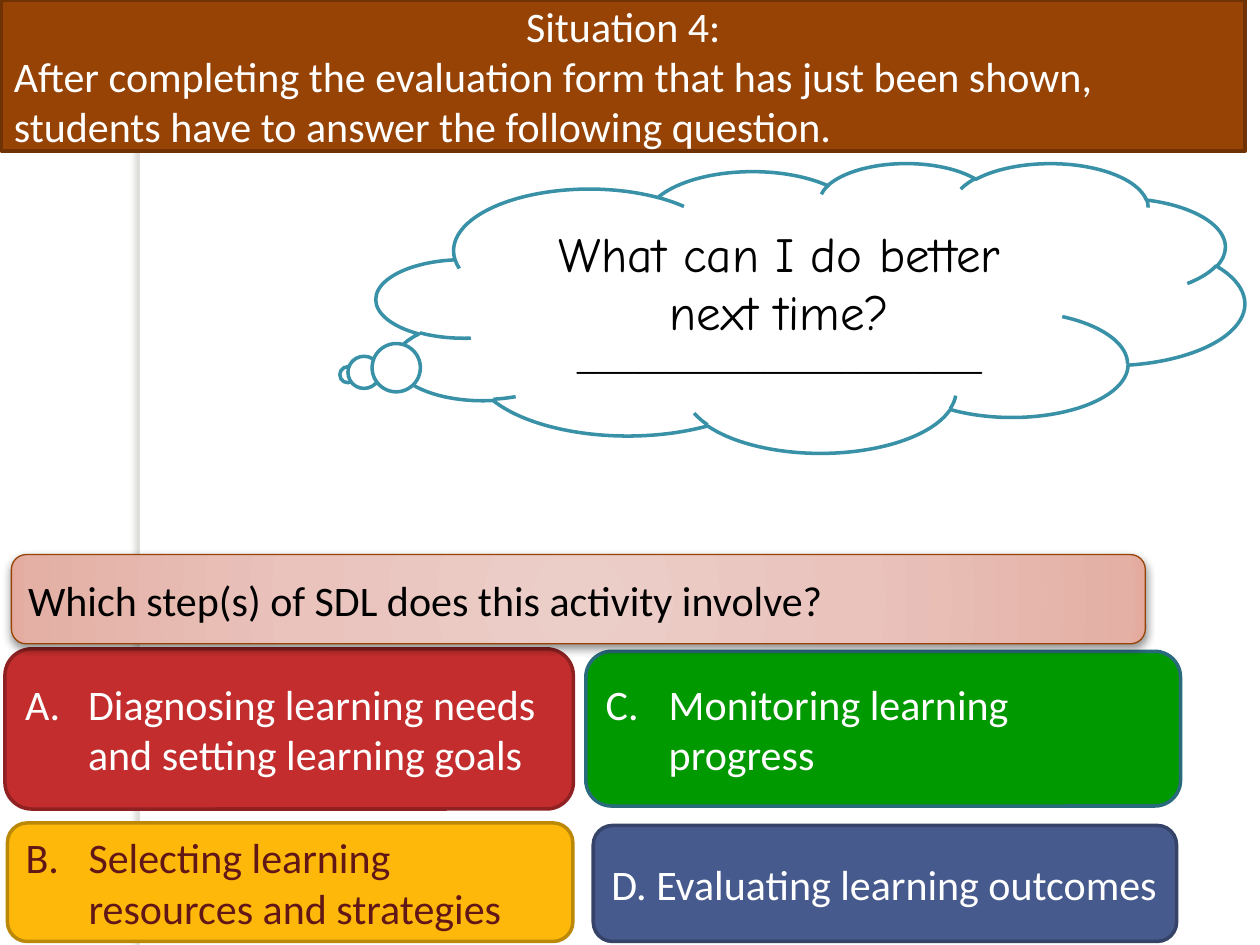
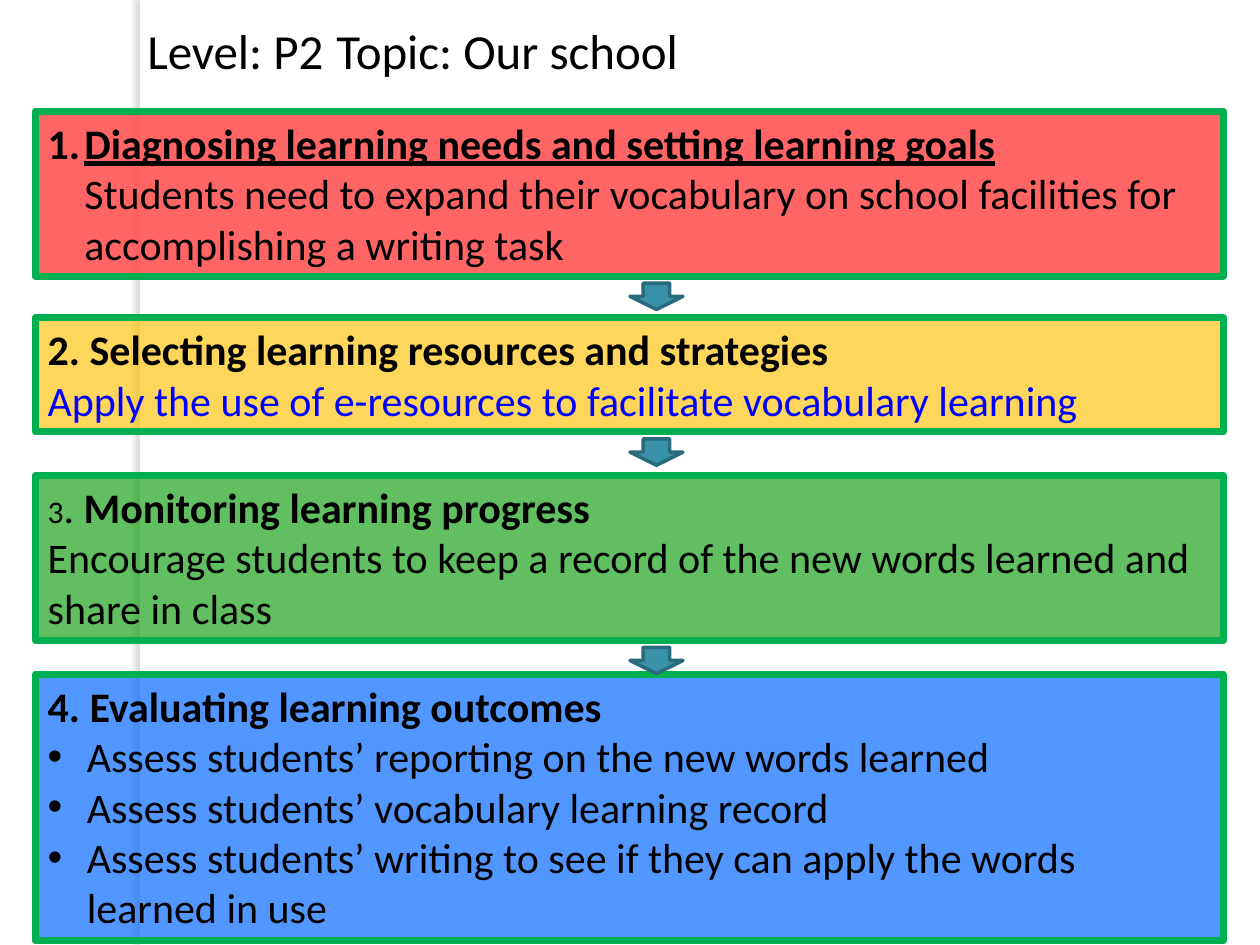
from lxml import etree
from pptx import Presentation
from pptx.dml.color import RGBColor as Rgb
from pptx.enum.shapes import MSO_SHAPE as Kind
from pptx.enum.text import MSO_ANCHOR as Anchor, PP_ALIGN as Align
from pptx.oxml import parse_xml
from pptx.oxml.ns import nsdecls, qn
from pptx.util import Cm, Pt

WIDE, HIGH = 25.4, 19.05
FONT = "Calibri"
HEX = {
    "white": "FFFFFF", "black": "000000", "shade": "736F63",
    "brown": "964305", "umber": "6F3204", "wine": "621717",
    "red": "C32D2E", "maroon": "902122", "gold": "FEB80A", "ochre": "BC8807",
    "green": "009900", "navy": "475A8D", "ink": "354368",
    "teal": "3891A7", "slate": "296B7C", "frame": "00B050",
    "coral": "FF5050", "amber": "FFC000", "azure": "0066FF", "link": "0000FF",
}

# Slide 1: the situation, the question and the answers
BAND = [
    {"text": "Situation 4:", "align": Align.CENTER},
    {"text": "After completing the evaluation form that has just been shown, "
             "students have to answer the following question."},
]
CLOUD = [
    {"text": "What can I do better next time?", "size": 28, "font": "Comic Neue",
     "align": Align.CENTER},
    {"text": "_" * 26, "size": 18, "font": "Comic Neue", "align": Align.CENTER},
]
ASK = "Which step(s) of SDL does this activity involve?"
GLOW = [(0, "ECCEC9"), (50, "E9C3BC"), (97, "E4AFA4"), (100, "E4A89B")]
# place, fill, line, text colour, number, text
CHOICES = [
    ((0.1, 13.08, 11.46, 3.23), "red", "maroon", "white", 1,
     "Diagnosing learning needs and setting learning goals"),
    ((0.15, 16.59, 11.4, 2.39), "gold", "ochre", "wine", 2,
     "Selecting learning resources and strategies"),
    ((11.81, 13.13, 11.99, 3.12), "green", "slate", "white", 3,
     "Monitoring learning progress"),
    ((11.96, 16.64, 11.76, 2.34), "navy", "ink", "white", None,
     "D. Evaluating learning outcomes"),
]

# Slide 2: the four steps
HEAD = "Level: P2\tTopic: Our school"
DOT = {"mark": "•", "hang": 0.79}
# top, height, fill, opacity in percent, paragraphs
STEPS = [
    (2.24, 3.33, "coral", 88, [
        {"text": "Diagnosing learning needs and setting learning goals",
         "bold": True, "under": True, "auto": ("arabicPeriod", 1), "hang": 0.74},
        {"text": "Students need to expand their vocabulary on school facilities "
                 "for accomplishing a writing task", "left": 0.74},
    ]),
    (6.4, 2.31, "amber", 64, [
        {"text": "2. Selecting learning resources and strategies", "bold": True},
        {"text": "Apply the use of e-resources to facilitate vocabulary learning",
         "color": "link"},
    ]),
    (9.58, 3.33, "green", 62, [
        {"runs": [("3", 18, False), (". ", 24, False),
                  ("Monitoring learning progress", 24, True)]},
        {"text": "Encourage students to keep a record of the new words learned "
                 "and share in class"},
    ]),
    (13.59, 5.38, "azure", 68, [
        {"text": "4. Evaluating learning outcomes", "bold": True},
        {"text": "Assess students’ reporting on the new words learned", **DOT},
        {"text": "Assess students’ vocabulary learning record", **DOT},
        {"text": "Assess students’ writing to see if they can apply the words "
                 "learned in use", **DOT},
    ]),
]
LEFT, SPAN = 0.71, 23.95
ARROW = (12.7, 1.07, 0.53)  # left, width, height
GAP = 0.14


def rgb(name):
    return Rgb.from_string(HEX[name])


def sub(node, tag, **attrs):
    return etree.SubElement(node, qn("a:" + tag),
                            {key: str(val) for key, val in attrs.items()})


def write(frame, paras, color, anchor):
    """Fill a text frame with paragraphs given as dicts."""
    frame.word_wrap = True
    frame.vertical_anchor = anchor
    for i, item in enumerate(paras):
        para = frame.add_paragraph() if i else frame.paragraphs[0]
        para.alignment = item.get("align", Align.LEFT)
        props = para._p.get_or_add_pPr()
        hang = item.get("hang", 0)
        props.set("marL", str(int(Cm(item.get("left", hang)))))
        props.set("indent", str(-int(Cm(hang))))
        if "mark" in item:
            sub(props, "buFont", typeface="Arial")
            sub(props, "buChar", char=item["mark"])
        elif "auto" in item:
            kind, start = item["auto"]
            sub(props, "buAutoNum", type=kind, startAt=start)
        if "tab" in item:
            sub(sub(props, "tabLst"), "tab", pos=int(Cm(item["tab"])), algn="l")
        font = para.font
        font.name = item.get("font", FONT)
        font.size = Pt(item.get("size", 24))
        font.bold = item.get("bold", False)
        font.underline = item.get("under", False)
        font.color.rgb = rgb(item.get("color", color))
        if "runs" not in item:
            para.add_run().text = item["text"]
        for text, size, bold in item.get("runs", []):
            run = para.add_run()
            run.text = text
            run.font.size, run.font.bold = Pt(size), bold


def draw(slide, kind, at, fill, line=None, width=2, paras=(), color="black",
         anchor=Anchor.MIDDLE):
    shape = slide.shapes.add_shape(kind, *map(Cm, at))
    shape.shadow.inherit = False
    shape.fill.solid()
    shape.fill.fore_color.rgb = rgb(fill)
    if line:
        shape.line.color.rgb = rgb(line)
        shape.line.width = Pt(width)
    else:
        shape.line.fill.background()
    if paras:
        write(shape.text_frame, paras, color, anchor)
    return shape


def shade(shape, color, alpha, blur, dist, angle):
    """Give the shape an outer shadow."""
    effects = shape.element.spPr.find(qn("a:effectLst"))
    outer = sub(effects, "outerShdw", blurRad=int(Pt(blur)), dist=int(Pt(dist)),
                dir=angle * 60000, algn="ctr", rotWithShape=0)
    sub(sub(outer, "srgbClr", val=HEX[color]), "alpha", val=alpha * 1000)


def fade(shape, alpha):
    """Make the solid fill see-through."""
    tint = shape.element.spPr.find(qn("a:solidFill"))[0]
    sub(tint, "alpha", val=alpha * 1000)


def glow(shape, stops):
    """Swap the solid fill for a round gradient from the centre."""
    grad = parse_xml(f'<a:gradFill {nsdecls("a")} rotWithShape="1"/>')
    row = sub(grad, "gsLst")
    for pos, tint in stops:
        sub(sub(row, "gs", pos=pos * 1000), "srgbClr", val=tint)
    half = dict.fromkeys("ltrb", 50000)
    sub(sub(grad, "path", path="circle"), "fillToRect", **half)
    props = shape.element.spPr
    props.replace(props.find(qn("a:solidFill")), grad)


def start(deck):
    """Add a blank slide with the shaded edge that every slide has."""
    slide = deck.slides.add_slide(deck.slide_layouts[6])
    edge = draw(slide, Kind.RECTANGLE, (2.82, 0, 0.2, HIGH), "white")
    shade(edge, "shade", 25, 3, 3, 180)
    return slide


def quiz(deck):
    slide = start(deck)
    for at, fill, line, color, num, text in CHOICES:
        para = {"text": text}
        if num:
            para.update(auto=("alphaUcPeriod", num), hang=1.27)
        draw(slide, Kind.ROUNDED_RECTANGLE, at, fill, line, 2, [para], color)
    ask = draw(slide, Kind.ROUNDED_RECTANGLE, (0.23, 11.18, 22.86, 1.8), "white",
               "brown", 0.75, [{"text": ASK}])
    glow(ask, GLOW)
    shade(ask, "black", 43, 5, 2, 90)
    draw(slide, Kind.RECTANGLE, (0.03, 0, 25.07, 3.05), "brown", "umber", 2,
         BAND, "white")
    cloud = draw(slide, Kind.CLOUD_CALLOUT, (7.59, 3.28, 17.5, 5.84), "white",
                 "teal", 2, CLOUD)
    cloud.adjustments[0], cloud.adjustments[1] = -0.533, 0.232


def plan(deck):
    slide = start(deck)
    head = slide.shapes.add_textbox(*map(Cm, (2.72, 0.28, 16.79, 3.68)))
    write(head.text_frame, [{"text": HEAD, "size": 28, "tab": 7.8}], "black",
          Anchor.TOP)
    for top, high, fill, alpha, paras in STEPS:
        box = draw(slide, Kind.RECTANGLE, (LEFT, top, SPAN, high), fill, "frame",
                   4, paras, anchor=Anchor.TOP)
        fade(box, alpha)
    left, wide, tall = ARROW
    for top, high, *_ in STEPS[:-1]:
        draw(slide, Kind.DOWN_ARROW, (left, top + high + GAP, wide, tall),
             "teal", "slate")


def main():
    deck = Presentation()
    deck.slide_width, deck.slide_height = Cm(WIDE), Cm(HIGH)
    quiz(deck)
    plan(deck)
    deck.save("out.pptx")


if __name__ == "__main__":
    main()
